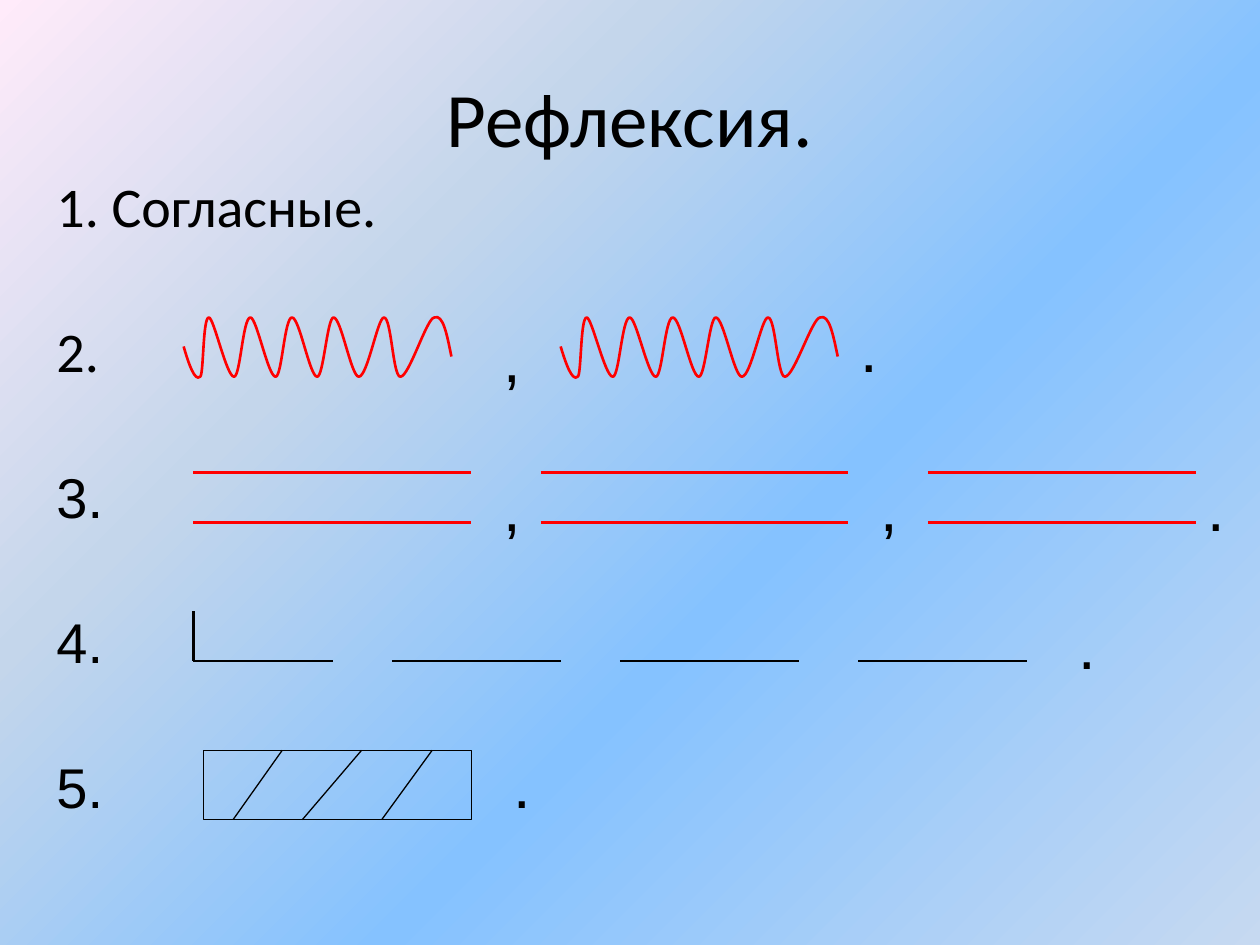
from dataclasses import dataclass

from lxml import etree
from pptx import Presentation, util as u
from pptx.dml.color import RGBColor
from pptx.enum import shapes, text
from pptx.oxml.ns import qn

# The slide is a grid of 100 columns by 75 rows; all lengths are in grid units.
CELL = u.Inches(0.1)
COLS, ROWS = 100, 75
RED, BLACK = "FF0000", "000000"
BACKGROUND = [(0, "C6D9F1"), (40, "85C2FF"), (70, "C4D6EB"), (100, "FFEBFA")]
ITEMS = [("1. Согласные.", "Calibri"), ("2.", "Calibri"),
         ("3.", "Arial"), ("4.", "Arial"), ("5.", "Arial")]

# Wave: x of both handles and the end of each stroke, from the wave's left edge.
CREST, TROUGH = 25.2, 29.9
STROKES = [(1.6, 1.5, 2), (2.4, 3.4, 4), (4.5, 4.7, 5.3), (5.8, 6.7, 7.3),
           (7.8, 8, 8.6), (9.2, 10, 10.6), (11.1, 11.4, 11.9), (12.5, 13.3, 13.9),
           (14.6, 15.4, 15.9), (16.5, 16.6, 17.2), (17.9, 19.3, 19.9)]


@dataclass
class Segment:
    x1: float
    y1: float
    x2: float
    y2: float
    color: str = BLACK
    width: float = 1.5


@dataclass
class Mark:
    char: str
    left: float
    top: float


@dataclass
class Wave:
    left: float
    stretch: float


WAVES = [Wave(14.58, 1), Wave(44.5, 1.035)]
DOUBLE_RULES = [(15.35, 37.4), (42.9, 67.3), (73.65, 94.9)]
DASHES = [(15.35, 26.4), (31.1, 44.5), (49.2, 63.4), (68.1, 81.5)]
HATCHES = [(28.7, 24), (34.3, 30.3), (22.4, 18.5)]
RULES = [Segment(a, y, b, y, RED) for a, b in DOUBLE_RULES for y in (37.5, 41.45)]
STEM_AND_DASHES = [Segment(15.35, 48.5, 15.35, 52.45)] + [
    Segment(a, 52.45, b, 52.45) for a, b in DASHES]
HATCHING = [Segment(a, 59.55, b, 65.05, width=0.75) for a, b in HATCHES]
WAVE_MARKS = [Mark(",", 39, 24.9), Mark(".", 67.3, 24.1)]
RULE_MARKS = [Mark(",", 39, 36.7), Mark(",", 68.9, 36.7), Mark(".", 94.85, 36.7)]
DASH_MARKS = [Mark(".", 84.65, 47.65)]
FRAME_MARKS = [Mark(".", 39.8, 58.7)]


def cells(*lengths: float) -> list[int]:
    return [round(n * CELL) for n in lengths]


def rgb(color: str) -> RGBColor:
    return RGBColor.from_string(color)


def style_line(line, color: str, width: float) -> None:
    line.color.rgb = rgb(color)
    line.width = u.Pt(width)


def paint_background(s) -> None:
    fill = s.background.fill
    fill.gradient()
    fill.gradient_angle = 135
    stops = s.element.find(".//" + qn("a:gsLst"))
    for old in list(stops):
        stops.remove(old)
    for share, color in BACKGROUND:
        stop = etree.SubElement(stops, qn("a:gs"), pos=str(share * 1000))
        etree.SubElement(stop, qn("a:srgbClr"), val=color)


def add_text(s, box: tuple, lines: list, size: float, wrap: bool = True):
    """Add a text box with one paragraph for each (wording, font) pair."""
    tf = s.shapes.add_textbox(*cells(*box)).text_frame
    tf.word_wrap = wrap
    for i, (wording, font) in enumerate(lines):
        p = tf.paragraphs[0] if i == 0 else tf.add_paragraph()
        p.text = wording
        f = p.runs[0].font
        f.name, f.size, f.color.rgb = font, u.Pt(size), rgb(BLACK)
    return tf


def add_segments(s, segments: list[Segment]) -> None:
    for seg in segments:
        sp = s.shapes.add_connector(shapes.MSO_CONNECTOR.STRAIGHT,
                                    *cells(seg.x1, seg.y1, seg.x2, seg.y2))
        style_line(sp.line, seg.color, seg.width)
        etree.SubElement(sp.element.spPr, qn("a:effectLst"))


def add_marks(s, marks: list[Mark]) -> None:
    for mark in marks:
        add_text(s, (mark.left, mark.top, 3.4, 7), [(mark.char, "Arial")], 36, wrap=False)


def wave_points() -> list[tuple]:
    """Start point, then two handles and an end point for each stroke."""
    points = [(0, 27.5), (0.4, 28.9), (0.9, 30.3), (1.3, TROUGH)]
    start, end = TROUGH, CREST
    for x1, x2, x3 in STROKES:
        points += [(x1, start), (x2, end), (x3, end)]
        start, end = end, start
    return points + [(20.6, 24.9), (20.9, 26.6), (21.25, 28.3)]


def curve_outline(sp) -> None:
    """Turn each three straight steps of the outline into one Bezier curve."""
    path = sp.element.find(".//" + qn("a:path"))
    steps = path.findall(qn("a:lnTo"))
    for i in range(0, len(steps), 3):
        curve = etree.SubElement(path, qn("a:cubicBezTo"))
        for step in steps[i:i + 3]:
            curve.append(step[0])
            path.remove(step)


def add_wave(s, wave: Wave) -> None:
    points = [tuple(cells(wave.left + x * wave.stretch, y)) for x, y in wave_points()]
    builder = s.shapes.build_freeform(*points[0])
    builder.add_line_segments(points[1:], close=False)
    sp = builder.convert_to_shape()
    curve_outline(sp)
    sp.shadow.inherit = False
    sp.fill.background()
    style_line(sp.line, RED, 1.5)


def add_frame(s) -> None:
    sp = s.shapes.add_shape(shapes.MSO_SHAPE.RECTANGLE, *cells(16.15, 59.55, 21.25, 5.5))
    sp.shadow.inherit = False
    sp.fill.background()
    style_line(sp.line, BLACK, 0.75)


def main() -> None:
    prs = Presentation()
    prs.slide_width, prs.slide_height = cells(COLS, ROWS)
    s = prs.slides.add_slide(prs.slide_layouts[6])
    paint_background(s)

    title = add_text(s, (5, 3, 90, 12.5), [("Рефлексия.", "Calibri")], 44)
    title.vertical_anchor = text.MSO_ANCHOR.MIDDLE
    title.paragraphs[0].alignment = text.PP_ALIGN.CENTER

    items = add_text(s, (3.5, 13.05, 90, 53.4), ITEMS, 32)
    for i, p in enumerate(items.paragraphs):
        p.line_spacing = u.Pt(39)
        p.space_before = u.Pt(44 if i else 0)

    for wave in WAVES:
        add_wave(s, wave)
    add_marks(s, WAVE_MARKS)
    add_segments(s, RULES)
    add_marks(s, RULE_MARKS)
    add_segments(s, STEM_AND_DASHES)
    add_marks(s, DASH_MARKS)
    add_frame(s)
    add_segments(s, HATCHING)
    add_marks(s, FRAME_MARKS)
    prs.save("out.pptx")


if __name__ == "__main__":
    main()
